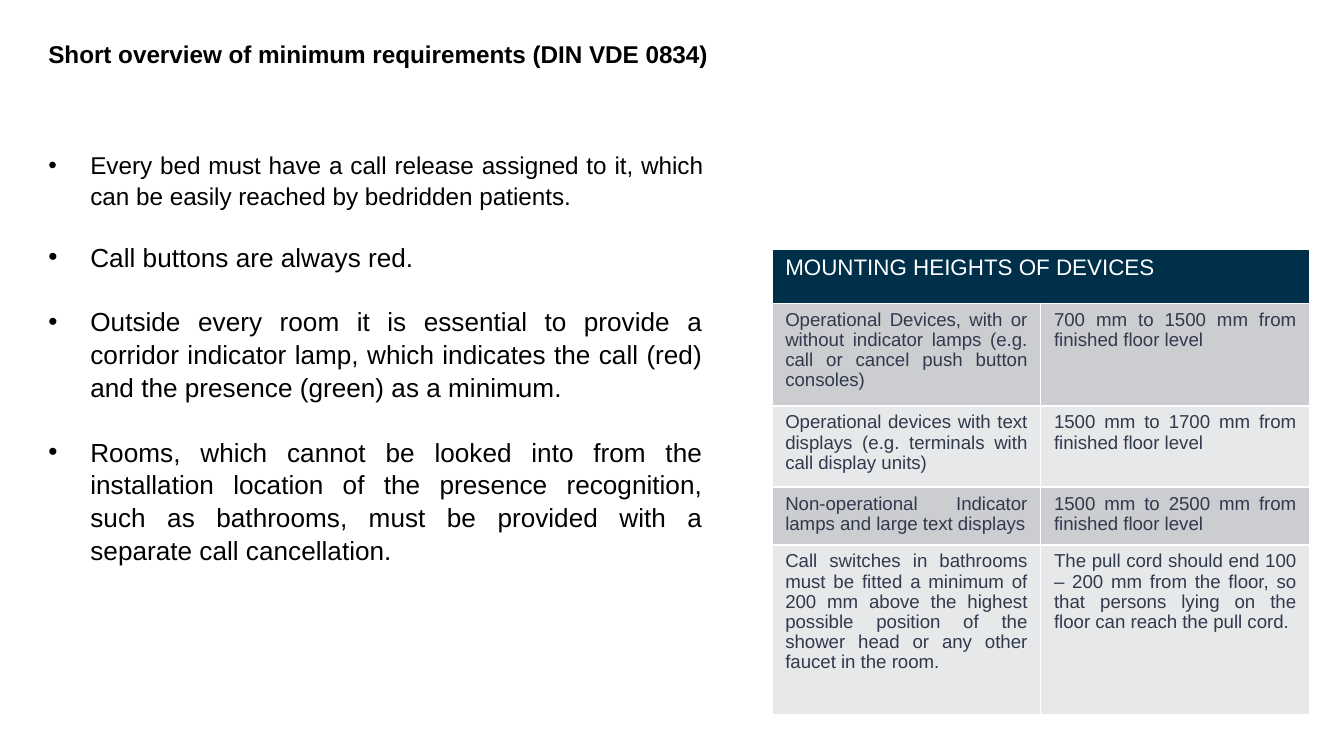
from pptx import Presentation
from pptx.dml.color import RGBColor
from pptx.enum import text as t
from pptx.util import Pt

FONT = "Arial"
HEX = {"ink": "000000", "head": "002F4A", "white": "FFFFFF",
       "cell": "31394D", "dark": "CCCDD0", "light": "E7E8E9"}

TITLE = "Short overview of minimum requirements (DIN VDE 0834)"
# text, size, space before
RULES = [
    ("Every bed must have a call release assigned to it, which can be easily "
     "reached by bedridden patients.", 13, 0),
    ("Call buttons are always red.", 14, 15.7),
    ("Outside every room it is essential to provide a corridor indicator lamp, "
     "which indicates the call (red) and the presence (green) as a minimum.", 14, 16.9),
    ("Rooms, which cannot be looked into from the installation location of the "
     "presence recognition, such as bathrooms, must be provided with a separate "
     "call cancellation.", 14, 16.9),
]
HEAD = "MOUNTING HEIGHTS OF DEVICES"
# device, height, row height
ROWS = [
    ("Operational Devices, with or without indicator lamps (e.g. call or cancel "
     "push button consoles)", "700 mm to 1500 mm from finished floor level", 55),
    ("Operational devices with text displays (e.g. terminals with call display "
     "units)", "1500 mm to 1700 mm from finished floor level", 43.5),
    ("Non-operational Indicator lamps and large text displays",
     "1500 mm to 2500 mm from finished floor level", 31),
    ("Call switches in bathrooms must be fitted a minimum of 200 mm above the "
     "highest possible position of the shower head or any other faucet in the room.",
     "The pull cord should end 100 – 200 mm from the floor, so that persons lying "
     "on the floor can reach the pull cord.", 91),
]
HEAD_H = 29


def rgb(name):
    return RGBColor.from_string(HEX[name])


def write(par, words, size, ink, bold=False, line=1.05, before=0, after=0):
    par.alignment = t.PP_ALIGN.JUSTIFY
    par.line_spacing = line
    par.space_before, par.space_after = Pt(before), Pt(after)
    run = par.add_run()
    run.text = words
    font = run.font
    font.name, font.size, font.bold = FONT, Pt(size), bold
    font.color.rgb = rgb(ink)


def place(shape, left, top, width, height, wrap):
    shape.left, shape.top = Pt(left), Pt(top)
    shape.width, shape.height = Pt(width), Pt(height)
    frame = shape.text_frame
    frame.word_wrap = wrap
    frame.auto_size = t.MSO_AUTO_SIZE.NONE
    frame.vertical_anchor = t.MSO_ANCHOR.TOP
    return frame


def paint(cell, words, size, ink, fill):
    cell.fill.solid()
    cell.fill.fore_color.rgb = rgb(fill)
    write(cell.text_frame.paragraphs[0], words, size, ink, line=0.97)


def main():
    prs = Presentation()
    prs.slide_width, prs.slide_height = Pt(720), Pt(405)
    slide = prs.slides.add_slide(prs.slide_layouts[1])

    # Title
    frame = place(slide.shapes.title, 18.7, 16.6, 372, 23, False)
    write(frame.paragraphs[0], TITLE, 13, "ink", bold=True, after=6)

    # Bulleted rules
    frame = place(slide.placeholders[1], 18.7, 76.3, 365, 224, True)
    for i, (words, size, gap) in enumerate(RULES):
        par = frame.add_paragraph() if i else frame.paragraphs[0]
        write(par, words, size, "ink", before=gap)
        props = par._p.get_or_add_pPr()
        props.set("marL", str(Pt(22.5)))
        props.set("indent", str(Pt(-22.5)))

    # Table of mounting heights
    tall = HEAD_H + sum(row[-1] for row in ROWS)
    table = slide.shapes.add_table(len(ROWS) + 1, 2, Pt(413.5), Pt(133.5),
                                   Pt(288), Pt(tall)).table
    table.rows[0].height = Pt(HEAD_H)
    table.cell(0, 0).merge(table.cell(0, 1))
    paint(table.cell(0, 0), HEAD, 12, "white", "head")
    for r, (*cells, high) in enumerate(ROWS, 1):
        table.rows[r].height = Pt(high)
        for c, words in enumerate(cells):
            paint(table.cell(r, c), words, 10, "cell", "dark" if r % 2 else "light")

    prs.save("out.pptx")


if __name__ == "__main__":
    main()
